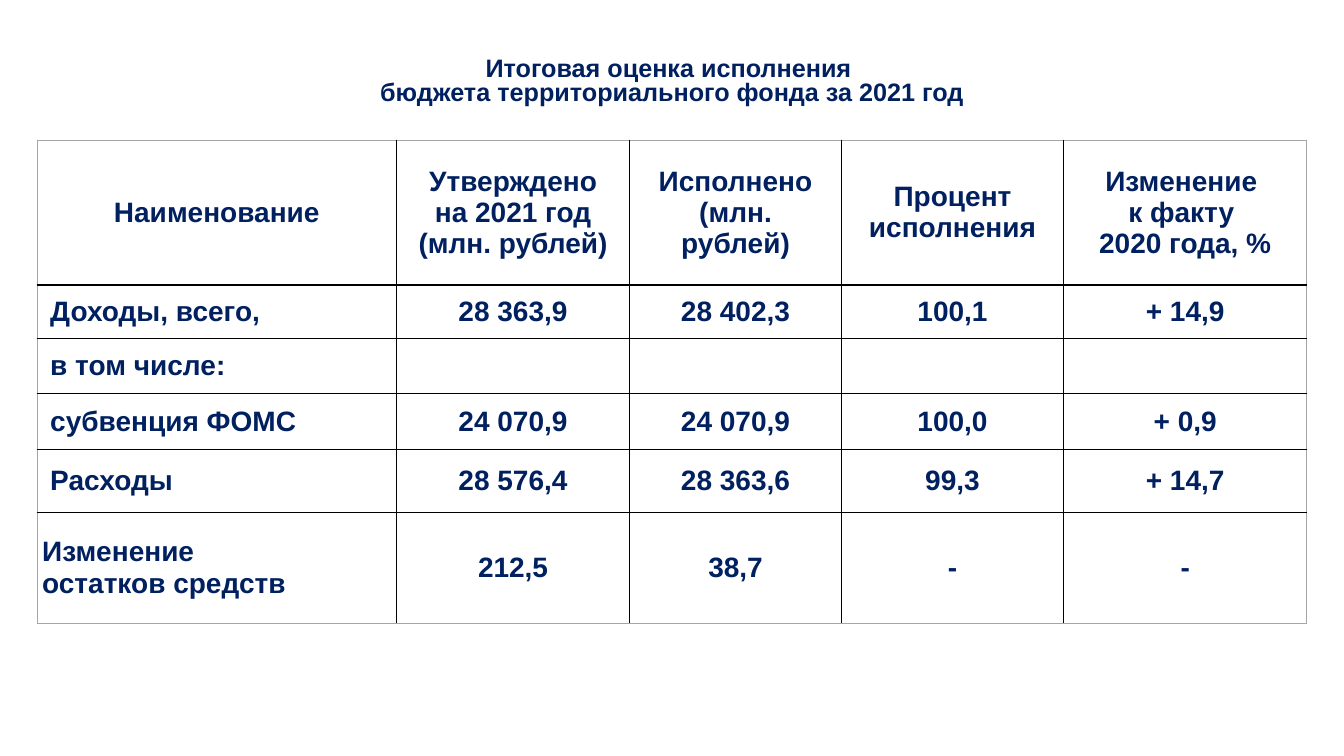
from dataclasses import dataclass

from lxml import etree
from pptx import Presentation
from pptx import util as u
from pptx.dml import color
from pptx.enum import text
from pptx.oxml import ns

Pt = u.Pt


@dataclass(frozen=True)
class Theme:
    font: str = "Arial"
    ink: str = "002060"
    grid: str = "000000"
    frame: str = "A6A6A6"
    title_size: int = 18
    table_size: int = 20
    thin: float = 1
    thick: float = 1.5


THEME = Theme()
CENTER, LEFT = text.PP_ALIGN.CENTER, text.PP_ALIGN.LEFT
MIDDLE = text.MSO_ANCHOR.MIDDLE

TITLE = "Итоговая оценка исполнения \vбюджета территориального фонда за 2021 год"
COLUMN_WIDTHS = [256.8, 166.4, 151.4, 158.6, 173.8]
ROW_HEIGHTS = [103.3, 38.2, 39.4, 39.8, 45.1, 79.2]
BUDGET = [
    ["Наименование", "Утверждено на 2021 год\n(млн. рублей)", "Исполнено\n(млн. рублей)",
     "Процент исполнения", "Изменение \nк факту \n2020 года, %"],
    ["Доходы, всего,", "28 363,9", "28 402,3", "100,1", "+ 14,9"],
    ["в том числе:", "", "", "", ""],
    ["субвенция ФОМС", "24 070,9", "24 070,9", "100,0", "+ 0,9"],
    ["Расходы", "28 576,4", "28 363,6", "99,3", "+ 14,7"],
    ["Изменение\nостатков средств", "212,5", "38,7", "-", "-"],
]
LAST_ROW, LAST_COLUMN = len(BUDGET) - 1, len(BUDGET[0]) - 1


def apply(target, formats):
    for name, value in formats.items():
        setattr(target, name, value)


def style_paragraphs(frame, size, formats):
    for paragraph in frame.paragraphs:
        apply(paragraph, formats)
        for run in paragraph.runs:
            apply(run.font, {"name": THEME.font, "size": Pt(size), "bold": True})
            run.font.color.rgb = color.RGBColor.from_string(THEME.ink)


def add_title(slide):
    shape = slide.shapes.add_textbox(Pt(48), Pt(35), Pt(864), Pt(47))
    frame = shape.text_frame
    apply(frame, {"text": TITLE, "word_wrap": True, "vertical_anchor": MIDDLE})
    style_paragraphs(frame, THEME.title_size, {"alignment": CENTER, "line_spacing": 0.8})


def add_border(cell, side, line_color, width):
    properties = cell._tc.get_or_add_tcPr()
    line = etree.SubElement(properties, ns.qn(f"a:ln{side}"), w=str(Pt(width)))
    fill = etree.SubElement(line, ns.qn("a:solidFill"))
    etree.SubElement(fill, ns.qn("a:srgbClr"), val=line_color)


def add_borders(cell, row, column):
    # Grey outer frame, black grid, heavier rule below the header
    outer = {"L": column == 0, "R": column == LAST_COLUMN,
             "T": row == 0, "B": row == LAST_ROW}
    header_rule = {"T": row == 1, "B": row == 0}
    for side, is_outer in outer.items():
        add_border(cell, side, THEME.frame if is_outer else THEME.grid,
                   THEME.thick if header_rule.get(side) else THEME.thin)


def fill_cell(cell, value, row, column):
    margin = Pt(3.6 if (row, column) == (LAST_ROW, 0) else 7.2 if column == 3 else 9.4)
    apply(cell, {"text": value, "vertical_anchor": MIDDLE,
                 "margin_left": margin, "margin_right": margin,
                 "margin_top": Pt(3.6), "margin_bottom": Pt(3.6)})
    alignment = LEFT if column == 0 and row > 0 else CENTER
    style_paragraphs(cell.text_frame, THEME.table_size, {"alignment": alignment})
    add_borders(cell, row, column)
    cell.fill.background()


def add_budget_table(slide):
    table = slide.shapes.add_table(
        len(BUDGET), len(BUDGET[0]), Pt(26.5), Pt(100.2),
        Pt(sum(COLUMN_WIDTHS)), Pt(sum(ROW_HEIGHTS))).table
    apply(table, {"first_row": False, "horz_banding": False})
    for column, width in zip(table.columns, COLUMN_WIDTHS):
        column.width = Pt(width)
    for row, height in zip(table.rows, ROW_HEIGHTS):
        row.height = Pt(height)
    for row, values in enumerate(BUDGET):
        for column, value in enumerate(values):
            fill_cell(table.cell(row, column), value, row, column)


def main():
    presentation = Presentation()
    apply(presentation, {"slide_width": Pt(960), "slide_height": Pt(540)})
    slide = presentation.slides.add_slide(presentation.slide_layouts[6])
    add_title(slide)
    add_budget_table(slide)
    presentation.save("out.pptx")


if __name__ == "__main__":
    main()
